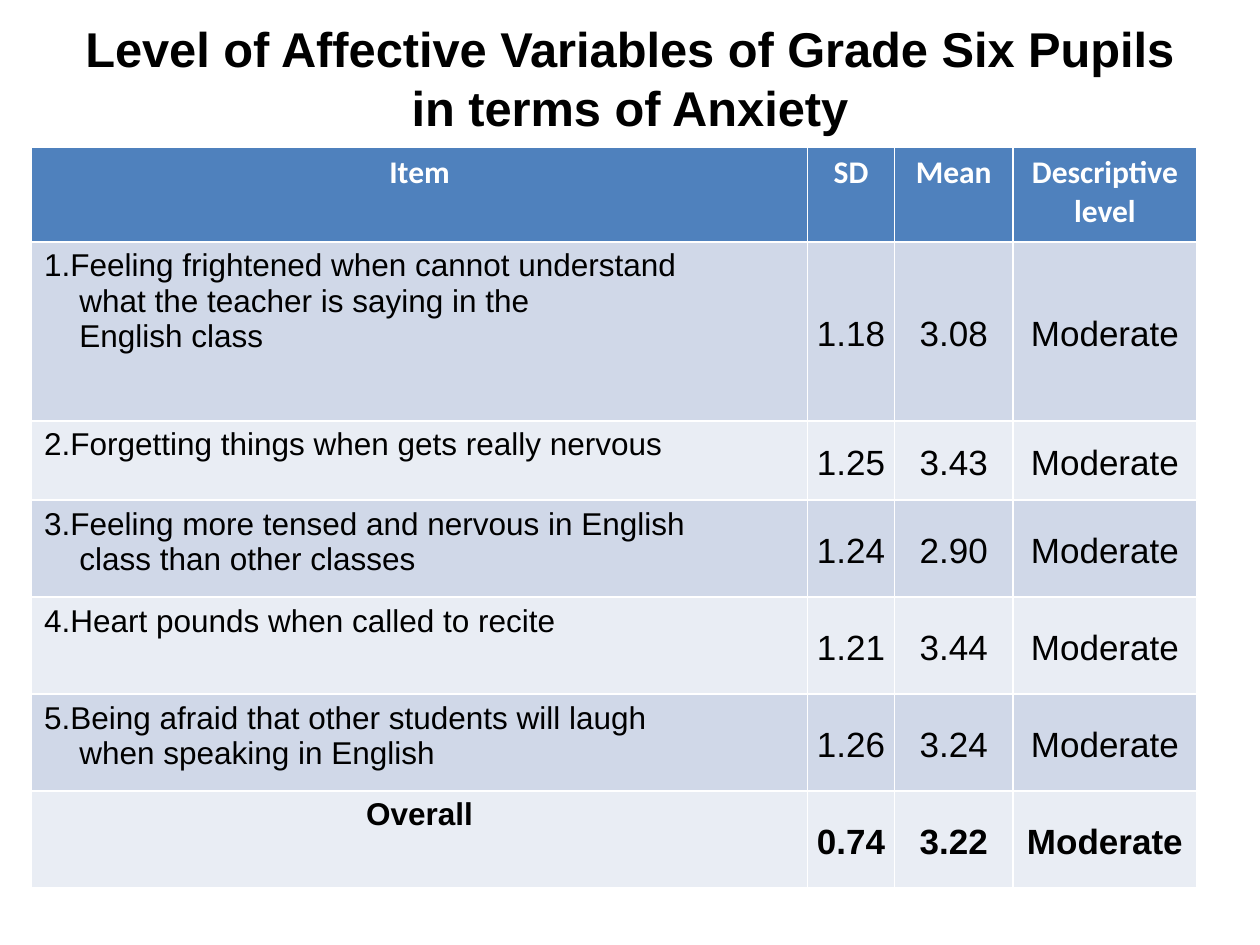
from dataclasses import dataclass

from pptx import Presentation
from pptx.dml.color import RGBColor as Color
from pptx.enum.text import MSO_ANCHOR as Anchor, PP_ALIGN as Align
from pptx.util import Inches, Pt

TITLE = "Level of Affective Variables of Grade Six Pupils in terms of Anxiety"
HEADERS = ["Item", "SD", "Mean", "Descriptive level"]
ITEMS = [
    (["1.Feeling frightened when cannot understand",
      "what the teacher is saying in the",
      "English class"], "1.18", "3.08", "Moderate"),
    (["2.Forgetting things when gets really nervous"], "1.25", "3.43", "Moderate"),
    (["3.Feeling more tensed and nervous in English",
      "class than other classes"], "1.24", "2.90", "Moderate"),
    (["4.Heart pounds when called to recite"], "1.21", "3.44", "Moderate"),
    (["5.Being afraid that other students will laugh",
      "when speaking in English"], "1.26", "3.24", "Moderate"),
]
OVERALL = (["Overall"], "0.74", "3.22", "Moderate")

COLUMN_WIDTHS = [6.16, 0.69, 0.94, 1.46]
ROW_HEIGHTS = [0.75, 1.42, 0.63] + [0.77] * 4
CONTINUATION_INDENT = 0.28
VALUE_MARGIN = 0.04


@dataclass(frozen=True)
class Theme:
    text: str = "000000"
    header_text: str = "FFFFFF"
    header_fill: str = "4F81BD"
    bands: tuple = ("D0D8E8", "E9EDF4")
    body_font: str = "Arial"
    header_font: str = "Calibri"
    title_size: float = 27.9
    item_size: float = 18
    value_size: float = 20


THEME = Theme()


def style(para, size, bold=False, font=THEME.body_font, color=THEME.text, align=Align.CENTER):
    para.alignment = align
    para.font.name = font
    para.font.size = Pt(size)
    para.font.bold = bold
    para.font.color.rgb = Color.from_string(color)


def fill_cell(cell, color):
    cell.fill.solid()
    cell.fill.fore_color.rgb = Color.from_string(color)


def add_title(page):
    box = page.shapes.add_textbox(Inches(0.5), Inches(0.2), Inches(9), Inches(0.83))
    frame = box.text_frame
    frame.word_wrap = True
    frame.vertical_anchor = Anchor.MIDDLE
    frame.margin_top = frame.margin_bottom = 0
    frame.text = TITLE
    style(frame.paragraphs[0], THEME.title_size, bold=True)


def write_header(cell, label):
    cell.text = label
    fill_cell(cell, THEME.header_fill)
    style(cell.text_frame.paragraphs[0], THEME.item_size, True,
          THEME.header_font, THEME.header_text)


def write_item(cell, lines, overall):
    cell.text = "\n".join(lines)
    for index, para in enumerate(cell.text_frame.paragraphs):
        style(para, THEME.item_size, overall, align=Align.CENTER if overall else Align.LEFT)
        if index:
            para._p.get_or_add_pPr().set("marL", str(Inches(CONTINUATION_INDENT)))


def write_value(cell, value, overall):
    cell.text = value
    cell.vertical_anchor = Anchor.MIDDLE
    cell.margin_left = cell.margin_right = Inches(VALUE_MARGIN)
    cell.margin_top = cell.margin_bottom = Inches(VALUE_MARGIN)
    para = cell.text_frame.paragraphs[0]
    para.line_spacing = 1.15
    style(para, THEME.value_size, overall)


def add_anxiety_table(page):
    records = ITEMS + [OVERALL]
    table = page.shapes.add_table(
        len(records) + 1, len(HEADERS), Inches(0.25), Inches(1.17),
        Inches(sum(COLUMN_WIDTHS)), Inches(sum(ROW_HEIGHTS))).table
    for column, width in zip(table.columns, COLUMN_WIDTHS):
        column.width = Inches(width)
    for row, height in zip(table.rows, ROW_HEIGHTS):
        row.height = Inches(height)
    for column, label in enumerate(HEADERS):
        write_header(table.cell(0, column), label)
    for index, (lines, *values) in enumerate(records):
        overall = index == len(ITEMS)
        cells = list(table.rows[index + 1].cells)
        for cell in cells:
            fill_cell(cell, THEME.bands[index % 2])
        write_item(cells[0], lines, overall)
        for cell, value in zip(cells[1:], values):
            write_value(cell, value, overall)


def main():
    deck = Presentation()
    deck.slide_width, deck.slide_height = Inches(10), Inches(7.5)
    page = deck.slides.add_slide(deck.slide_layouts[6])
    add_title(page)
    add_anxiety_table(page)
    deck.save("out.pptx")


if __name__ == "__main__":
    main()
